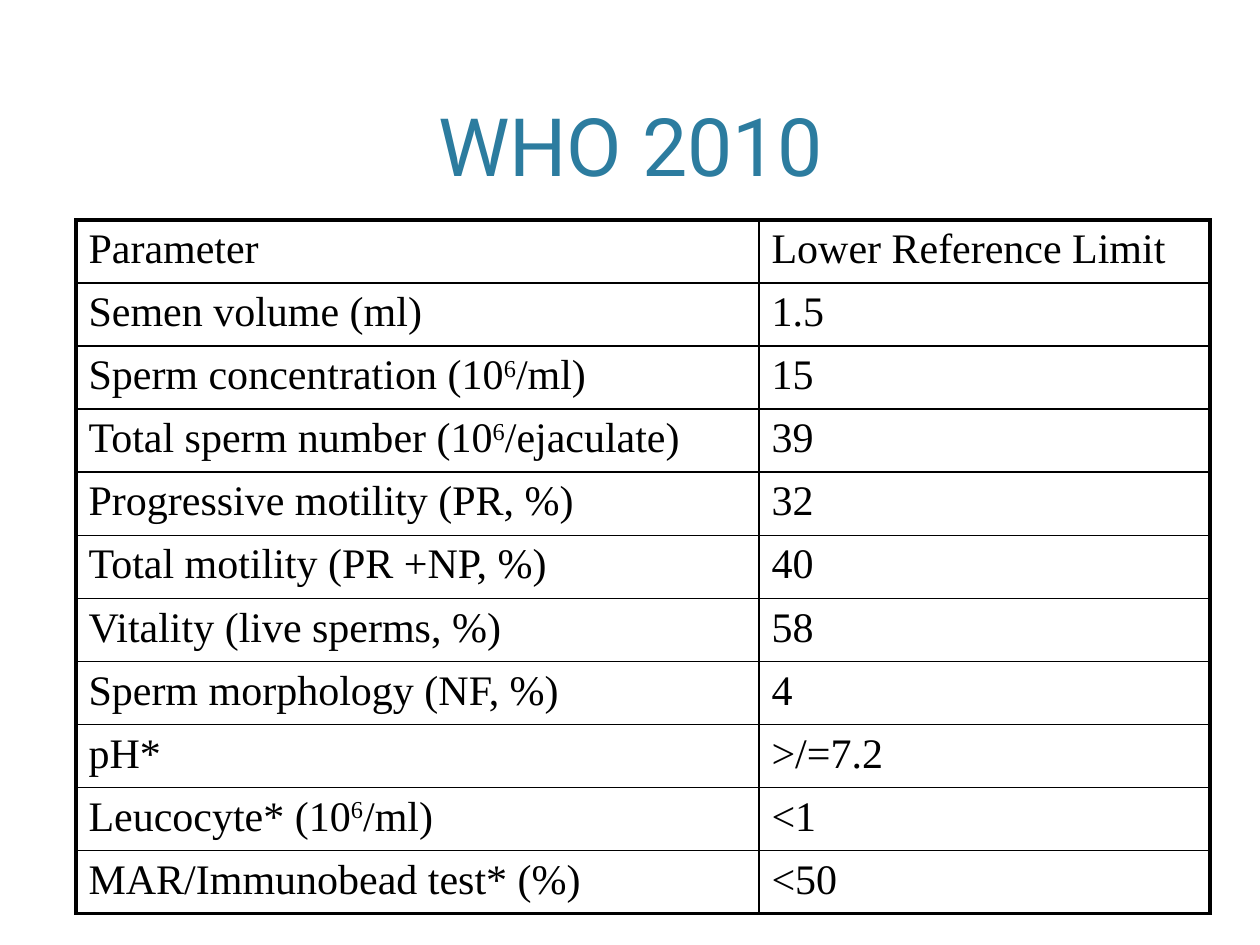
from lxml.etree import SubElement
from pptx import Presentation
from pptx.dml.color import RGBColor as RGB
from pptx.enum.text import MSO_ANCHOR as ANCHOR, PP_ALIGN as ALIGN
from pptx.oxml.ns import qn
from pptx.util import Emu, Pt

COLORS = {"title": "2C7C9F", "ink": "000000"}
TITLE = "WHO 2010"
ROWS = [
    (["Parameter"], ["Lower Reference Limit"]),
    (["Semen volume (ml)"], ["1.5"]),
    (["Sperm concentration (10", "6", "/ml)"], ["15"]),
    (["Total sperm number (10", "6", "/ejaculate)"], ["39"]),
    (["Progressive motility (PR, %)"], ["32"]),
    (["Total motility (PR +NP, %)"], ["40"]),
    (["Vitality (live sperms, %)"], ["58"]),
    (["Sperm morphology (NF, %)"], ["4"]),
    (["pH*"], [">/=7.2"]),
    (["Leucocyte* (10", "6", "/ml)"], ["<1"]),
    (["MAR/Immunobead test* (%)"], ["<50"]),
]
COL_WIDTHS = [683, 451]
ROW_HEIGHTS = [53] + [63] * (len(ROWS) - 2) + [25]
THICK, THIN = 2.25, 1


def px(n):
    return Emu(n * 914400 // 126)


def write(tf, parts, size, font, color, align=ALIGN.LEFT, before=0):
    p = tf.paragraphs[0]
    p.alignment = align
    if before:
        spacing = SubElement(p._p.get_or_add_pPr(), qn("a:spcBef"))
        SubElement(spacing, qn("a:spcPct"), val=str(before * 1000))
    for i, text in enumerate(parts):
        r = p.add_run()
        r.text = text
        r.font.size = Pt(size)
        r.font.name = font
        r.font.color.rgb = RGB.from_string(COLORS[color])
        if i % 2:
            r._r.get_or_add_rPr().set("baseline", "30000")


def set_borders(cell, widths):
    tcPr = cell._tc.get_or_add_tcPr()
    for side, width in widths.items():
        ln = SubElement(tcPr, qn(f"a:ln{side}"), w=str(Pt(width)))
        fill = SubElement(ln, qn("a:solidFill"))
        SubElement(fill, qn("a:srgbClr"), val=COLORS["ink"])


prs = Presentation()
prs.slide_width, prs.slide_height = px(1260), px(945)
s = prs.slides.add_slide(prs.slide_layouts[6])

tf = s.shapes.add_textbox(px(76), px(15), px(1109), px(184)).text_frame
tf.word_wrap = True
tf.vertical_anchor = ANCHOR.BOTTOM
write(tf, [TITLE], 46, "Roboto", "title", align=ALIGN.CENTER)

table = s.shapes.add_table(
    len(ROWS), len(COL_WIDTHS), px(76), px(220),
    px(sum(COL_WIDTHS)), px(sum(ROW_HEIGHTS)),
).table
table.first_row = table.horz_banding = False
for column, width in zip(table.columns, COL_WIDTHS):
    column.width = px(width)
for row, height in zip(table.rows, ROW_HEIGHTS):
    row.height = px(height)

last_row, last_col = len(ROWS) - 1, len(COL_WIDTHS) - 1
for i, row in enumerate(ROWS):
    for j, parts in enumerate(row):
        cell = table.cell(i, j)
        write(cell.text_frame, parts, 24, "Times New Roman", "ink", before=20)
        set_borders(cell, {
            "L": THICK if j == 0 else THIN,
            "R": THICK if j == last_col else THIN,
            "T": THICK if i == 0 else THIN,
            "B": THICK if i == last_row else THIN,
        })
        cell.fill.background()

prs.save("out.pptx")
